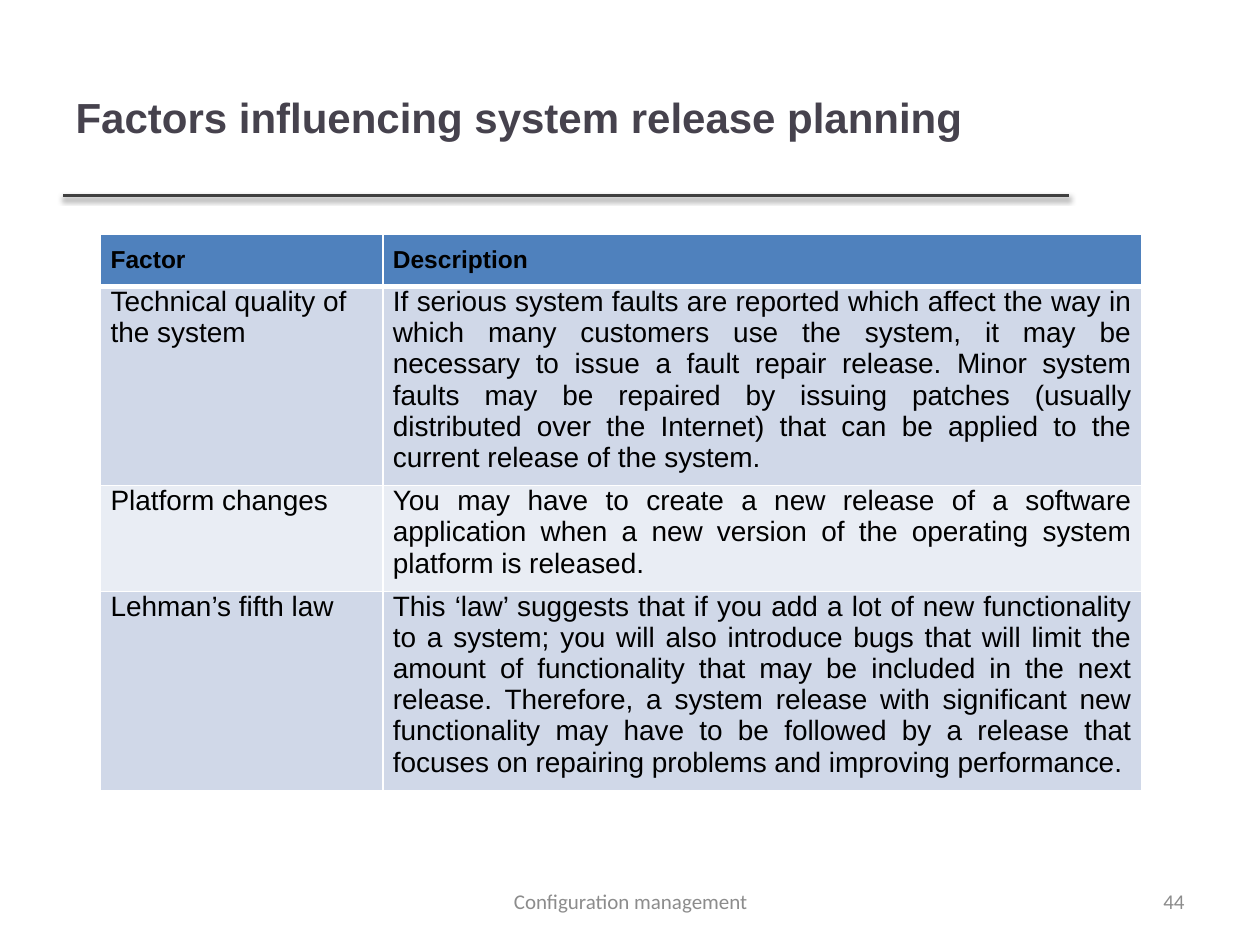
from lxml.etree import SubElement
from pptx import Presentation
from pptx.dml.color import RGBColor
from pptx.enum.shapes import MSO_CONNECTOR
from pptx.enum.text import MSO_ANCHOR, PP_ALIGN
from pptx.oxml import parse_xml
from pptx.oxml.ns import nsdecls, qn
from pptx.util import Cm, Pt

WHITE = RGBColor(0xFF, 0xFF, 0xFF)
BLACK = RGBColor(0x00, 0x00, 0x00)
TITLE_COLOR = RGBColor(0x46, 0x42, 0x4D)
RULE_COLOR = RGBColor(0x40, 0x40, 0x40)
FOOTER_COLOR = RGBColor(0x8C, 0x8C, 0x8C)
HEADER_FILL = RGBColor(0x4F, 0x81, 0xBD)
BAND_FILLS = (RGBColor(0xD0, 0xD8, 0xE8), RGBColor(0xE9, 0xED, 0xF4))

FACTORS = [
    ("Factor", "Description"),
    ("Technical quality of the system",
     "If serious system faults are reported which affect the way in which many "
     "customers use the system, it may be necessary to issue a fault repair "
     "release. Minor system faults may be repaired by issuing patches (usually "
     "distributed over the Internet) that can be applied to the current release "
     "of the system."),
    ("Platform changes",
     "You may have to create a new release of a software application when a new "
     "version of the operating system platform is released."),
    ("Lehman’s fifth law",
     "This ‘law’ suggests that if you add a lot of new functionality to a system; "
     "you will also introduce bugs that will limit the amount of functionality "
     "that may be included in the next release. Therefore, a system release with "
     "significant new functionality may have to be followed by a release that "
     "focuses on repairing problems and improving performance."),
]


def write(frame, text, font, size, color, align=PP_ALIGN.LEFT, bold=False):
    frame.text = text
    para = frame.paragraphs[0]
    para.alignment = align
    for span in para.runs:
        span.font.name = font
        span.font.size = Pt(size)
        span.font.bold = bold
        span.font.color.rgb = color


def add_title(page, left, top, width, height):
    title = page.shapes.title
    title.left, title.top, title.width, title.height = left, top, width, height
    title.text_frame.vertical_anchor = MSO_ANCHOR.MIDDLE
    write(title.text_frame, "Factors influencing system release planning",
          "Arial", 24, TITLE_COLOR, bold=True)

    # Rule along the bottom of the title box, with a soft shadow
    bottom = top + height
    rule = page.shapes.add_connector(
        MSO_CONNECTOR.STRAIGHT, left, bottom, left + width, bottom)
    rule.line.color.rgb = RULE_COLOR
    rule.line.width = Pt(2)
    rule._element.spPr.append(parse_xml(
        f'<a:effectLst {nsdecls("a")}>'
        f'<a:outerShdw blurRad="{Pt(3.1)}" dist="{Pt(1.6)}" dir="5400000" rotWithShape="0">'
        '<a:srgbClr val="000000"><a:alpha val="38000"/></a:srgbClr>'
        '</a:outerShdw></a:effectLst>'))


def set_borders(cell, **widths):
    properties = cell._tc.get_or_add_tcPr()
    for side in "LRTB":
        line = SubElement(properties, qn(f"a:ln{side}"),
                          w=str(Pt(widths.get(side, 1))))
        fill = SubElement(line, qn("a:solidFill"))
        SubElement(fill, qn("a:srgbClr"), val=str(WHITE))


def add_factor_table(page, left, top, width, height):
    frame = page.shapes.add_table(len(FACTORS), 2, left, top, width, height)
    table = frame.table
    table.columns[0].width = Cm(5.69)
    table.columns[1].width = width - Cm(5.69)
    for row in table.rows:
        row.height = Cm(1.04)  # rows grow to fit their text
    frame.height = height

    for r, texts in enumerate(FACTORS):
        header = r == 0
        for c, text in enumerate(texts):
            cell = table.cell(r, c)
            cell.margin_left = cell.margin_right = Cm(0.2)
            cell.margin_top = Cm(0.25 if header else 0)
            cell.margin_bottom = Cm(0.25)
            # Heavier line between the header and the body
            set_borders(cell, B=3 if header else 1, T=3 if r == 1 else 1)
            cell.fill.solid()
            cell.fill.fore_color.rgb = HEADER_FILL if header else BAND_FILLS[(r - 1) % 2]
            justified = header or c == 1
            write(cell.text_frame, text, "Arial", 14 if header else 16, BLACK,
                  PP_ALIGN.JUSTIFY if justified else PP_ALIGN.LEFT, bold=header)


def add_footer(page, text, align, left, top, width, height):
    box = page.shapes.add_textbox(left, top, width, height)
    box.text_frame.word_wrap = True
    box.text_frame.vertical_anchor = MSO_ANCHOR.MIDDLE
    write(box.text_frame, text, "Calibri", 12, FOOTER_COLOR, align)


def main():
    deck = Presentation()
    deck.slide_width, deck.slide_height = Cm(25.4), Cm(19.05)
    page = deck.slides.add_slide(deck.slide_layouts[5])

    add_title(page, Cm(1.27), Cm(0.76), Cm(20.28), Cm(3.18))
    add_factor_table(page, Cm(2.03), Cm(4.72), Cm(20.98), Cm(12.01))
    add_footer(page, "44", PP_ALIGN.RIGHT, Cm(18.21), Cm(17.65), Cm(5.92), Cm(1.02))
    add_footer(page, "Configuration management", PP_ALIGN.CENTER,
               Cm(8.69), Cm(17.65), Cm(8.05), Cm(1.02))

    deck.save("out.pptx")


if __name__ == "__main__":
    main()
